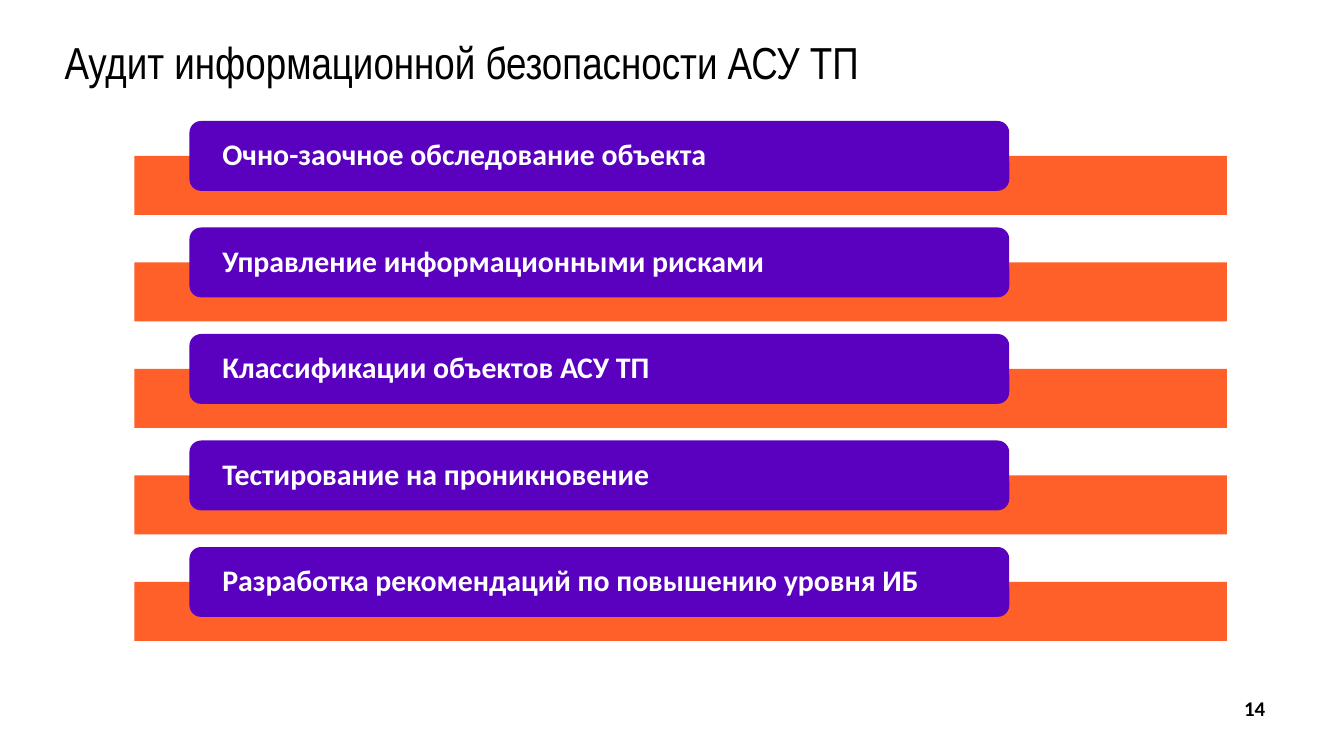
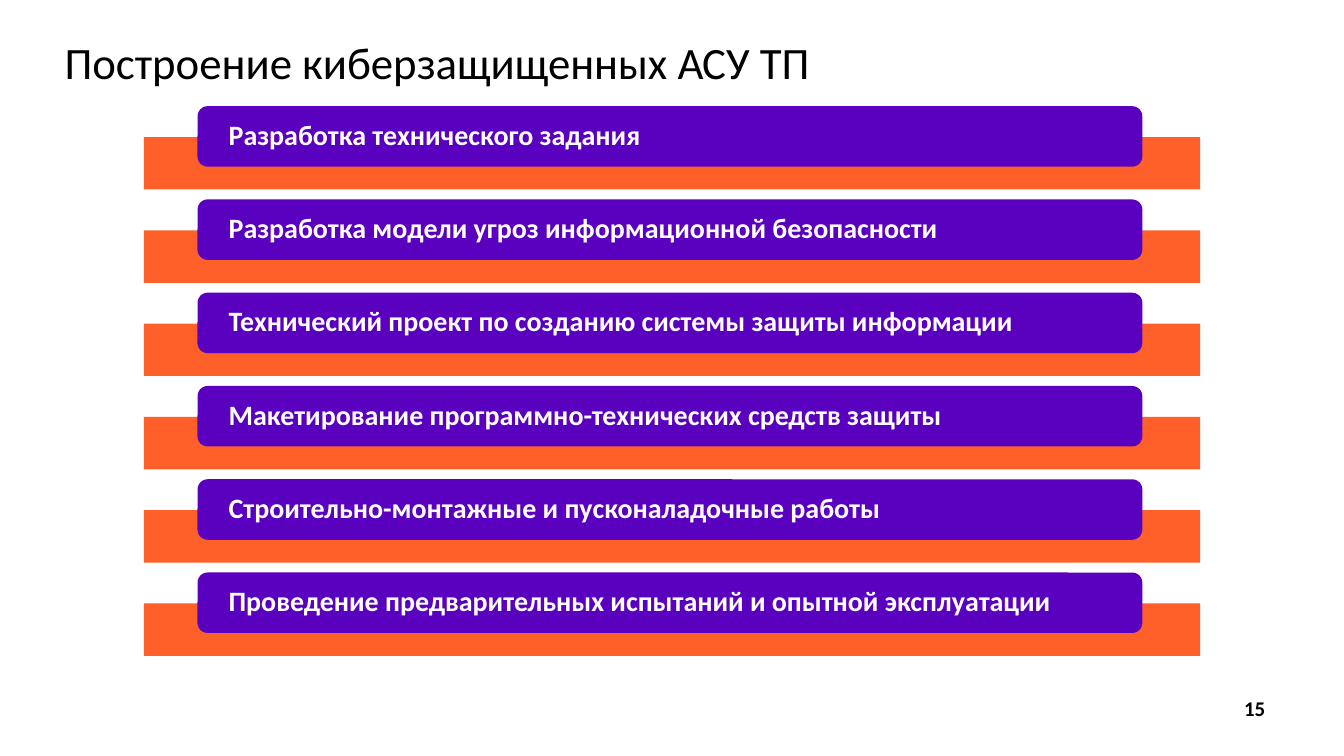
from lxml.etree import SubElement
from pptx import Presentation
from pptx.dml.color import RGBColor
from pptx.enum.shapes import MSO_SHAPE
from pptx.enum.text import MSO_ANCHOR, MSO_AUTO_SIZE, PP_ALIGN
from pptx.oxml.ns import qn
from pptx.util import Inches, Pt

COLORS = {"text": "000000", "label": "FFFFFF", "bar": "FF4F12", "plate": "5A00BF"}
TITLE_ONLY = 5


def write(frame, text, size, font="Calibri", color="text", bold=False,
          align=PP_ALIGN.LEFT, spacing=None):
    """Put one formatted paragraph into a text frame."""
    paragraph = frame.paragraphs[0]
    paragraph.alignment = align
    paragraph.line_spacing = spacing
    run = paragraph.add_run()
    run.text = text
    run.font.name = font
    run.font.size = Pt(size)
    run.font.bold = bold
    run.font.color.rgb = RGBColor.from_string(COLORS[color])


class Deck:
    """Holds the shared style and the current slide."""

    def __init__(self):
        self.prs = Presentation()
        self.prs.slide_width = Inches(10)
        self.prs.slide_height = Inches(10 * 9 / 16)
        self.slide = None

    def new_slide(self, title, number, title_font="Calibri"):
        self.slide = self.prs.slides.add_slide(self.prs.slide_layouts[TITLE_ONLY])
        self.title(title, title_font)
        self.page_number(number)

    def title(self, text, font):
        heading = self.slide.shapes.title
        heading.left, heading.top = Inches(0.48), Inches(0.25)
        heading.width, heading.height = Inches(8.99), Inches(0.47)
        frame = heading.text_frame
        frame.margin_left = 0
        frame.vertical_anchor = MSO_ANCHOR.TOP
        frame.auto_size = MSO_AUTO_SIZE.SHAPE_TO_FIT_TEXT
        write(frame, text, 24, font=font, spacing=0.9)

    def page_number(self, number):
        footer = self.slide.shapes.add_textbox(
            Inches(9.12), Inches(5.13), Inches(0.43), Inches(0.29))
        footer.text_frame.word_wrap = False
        footer.text_frame.auto_size = MSO_AUTO_SIZE.SHAPE_TO_FIT_TEXT
        write(footer.text_frame, str(number), 11.2, bold=True, align=PP_ALIGN.CENTER)

    def block(self, preset, left, top, width, height, color, alpha=None):
        block = self.slide.shapes.add_shape(
            preset, Inches(left), Inches(top), Inches(width), Inches(height))
        block.shadow.inherit = False
        block.line.fill.background()
        block.fill.solid()
        block.fill.fore_color.rgb = RGBColor.from_string(COLORS[color])
        if alpha:
            srgb = block.element.spPr.find(".//" + qn("a:srgbClr"))
            SubElement(srgb, qn("a:alpha")).set("val", str(alpha * 1000))
        return block

    def stage_list(self, stages, bar, plate, first, last, drop, size, inset):
        """Stack labelled plates over bars; bar and plate are (left, width, height)."""
        step = (last - first) / (len(stages) - 1)
        for index, stage in enumerate(stages):
            top = first + index * step
            self.block(MSO_SHAPE.RECTANGLE, bar[0], top + drop, *bar[1:], "bar", alpha=90)
            label = self.block(MSO_SHAPE.ROUNDED_RECTANGLE, plate[0], top, *plate[1:], "plate")
            frame = label.text_frame
            frame.word_wrap = True
            frame.vertical_anchor = MSO_ANCHOR.MIDDLE
            frame.margin_left = frame.margin_right = Inches(inset)
            frame.margin_top = frame.margin_bottom = 0
            write(frame, stage, size, color="label", bold=True, spacing=0.9)


def main():
    deck = Deck()

    # Security audit
    deck.new_slide("Аудит информационной безопасности АСУ ТП", 14, title_font="Arial Narrow")
    audit_stages = [
        "Очно-заочное обследование объекта",
        "Управление информационными рисками",
        "Классификации объектов АСУ ТП",
        "Тестирование на проникновение",
        "Разработка рекомендаций по повышению уровня ИБ",
    ]
    deck.stage_list(audit_stages, bar=(1, 8.13, 0.44), plate=(1.41, 6.1, 0.52),
                    first=0.9, last=4.07, drop=0.26, size=16, inset=0.22)

    # Building protected systems
    deck.new_slide("Построение киберзащищенных АСУ ТП", 15)
    project_stages = [
        "Разработка технического задания",
        "Разработка модели угроз информационной безопасности",
        "Технический проект по созданию системы защиты информации",
        "Макетирование программно-технических средств защиты",
        "Строительно-монтажные и пусконаладочные работы",
        "Проведение предварительных испытаний и опытной эксплуатации",
    ]
    deck.stage_list(project_stages, bar=(1.07, 7.86, 0.39), plate=(1.47, 7.03, 0.45),
                    first=0.79, last=4.26, drop=0.23, size=15, inset=0.21)

    deck.prs.save("out.pptx")


if __name__ == "__main__":
    main()
